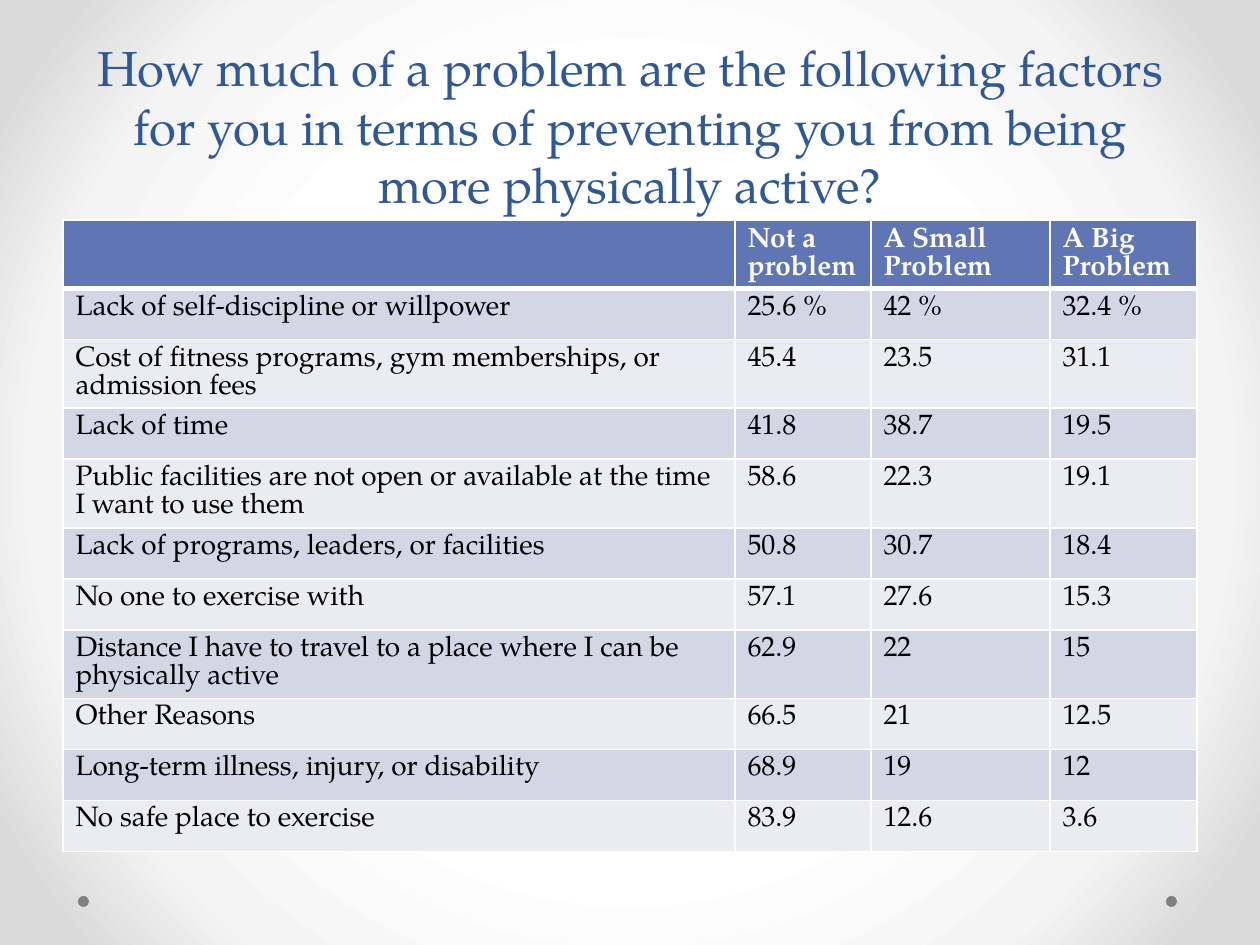
from dataclasses import dataclass

from pptx import Presentation, oxml, util as u
from pptx.dml.color import RGBColor
from pptx.enum import shapes, text
from pptx.oxml import ns

PX = 914400 / 126  # EMU per px


def px(n):
    return u.Emu(round(n * PX))


@dataclass(frozen=True)
class Theme:
    font: str = "TeX Gyre Pagella"
    title_size: int = 28
    table_size: int = 16
    title: str = "2F5897"
    body: str = "000000"
    header: str = "6076B4"
    white: str = "FFFFFF"
    bands: tuple = ("D2D6E5", "EAECF2")
    dot: str = "808080"
    backdrop: tuple = ((50, "FFFFFF"), (76, "F4F4F4"), (92, "DADADA"))


class Deck:
    def __init__(self, prs, theme):
        self.t = theme
        self.s = prs.slides.add_slide(prs.slide_layouts[6])

    def background(self):
        self.s.background.fill.gradient()
        old = self.s._element.find(".//" + ns.qn("a:gradFill"))
        stops = "".join(
            f'<a:gs pos="{pos * 1000}"><a:srgbClr val="{color}"/></a:gs>'
            for pos, color in self.t.backdrop)
        new = oxml.parse_xml(
            f'<a:gradFill {ns.nsdecls("a")} rotWithShape="1"><a:gsLst>{stops}</a:gsLst>'
            '<a:path path="circle"><a:fillToRect l="50000" t="50000" r="50000" b="50000"/>'
            '</a:path></a:gradFill>')
        old.getparent().replace(old, new)

    def style(self, p, size, color, bold=False):
        for r in p.runs:
            r.font.name = self.t.font
            r.font.size = u.Pt(size)
            r.font.bold = bold
            r.font.color.rgb = RGBColor.from_string(color)

    def dot(self, x, y, size):
        sp = self.s.shapes.add_shape(shapes.MSO_SHAPE.OVAL, px(x), px(y), px(size), px(size))
        sp.shadow.inherit = False
        sp.fill.solid()
        sp.fill.fore_color.rgb = RGBColor.from_string(self.t.dot)
        sp.line.fill.background()

    def title(self, words, x, y, w, h):
        tf = self.s.shapes.add_textbox(px(x), px(y), px(w), px(h)).text_frame
        tf.word_wrap = True
        tf.vertical_anchor = text.MSO_ANCHOR.BOTTOM
        tf.text = words
        p = tf.paragraphs[0]
        p.alignment = text.PP_ALIGN.CENTER
        self.style(p, self.t.title_size, self.t.title)

    def borders(self, cell, top, bottom):
        tcPr = cell._tc.get_or_add_tcPr()
        widths = {"lnL": 1, "lnR": 1, "lnT": top, "lnB": bottom}
        for i, (side, width) in enumerate(widths.items()):
            tcPr.insert(i, oxml.parse_xml(
                f'<a:{side} {ns.nsdecls("a")} w="{u.Pt(width)}"><a:solidFill>'
                f'<a:srgbClr val="{self.t.white}"/></a:solidFill></a:{side}>'))

    def cell(self, cell, words, row):
        head = row == 0
        fill = self.t.header if head else self.t.bands[(row - 1) % 2]
        cell.fill.solid()
        cell.fill.fore_color.rgb = RGBColor.from_string(fill)
        self.borders(cell, top=3 if row == 1 else 1, bottom=3 if head else 1)
        cell.text = words
        p = cell.text_frame.paragraphs[0]
        p.line_spacing = u.Pt(self.t.table_size)
        self.style(p, self.t.table_size, self.t.white if head else self.t.body, head)

    def table(self, rows, x, y, widths, row_h):
        tbl = self.s.shapes.add_table(
            len(rows), len(widths), px(x), px(y),
            px(sum(widths)), px(row_h * len(rows))).table
        for col, w in zip(tbl.columns, widths):
            col.width = px(w)
        for i, row in enumerate(rows):
            tbl.rows[i].height = px(row_h)
            for j, words in enumerate(row):
                self.cell(tbl.cell(i, j), words, i)


FACTORS = [
    ("", "Not a problem", "A Small Problem", "A Big Problem"),
    ("Lack of self-discipline or willpower", "25.6 %", "42 %", "32.4 %"),
    ("Cost of fitness programs, gym memberships, or admission fees", "45.4", "23.5", "31.1"),
    ("Lack of time", "41.8", "38.7", "19.5"),
    ("Public facilities are not open or available at the time I want to use them",
     "58.6", "22.3", "19.1"),
    ("Lack of programs, leaders, or facilities", "50.8", "30.7", "18.4"),
    ("No one to exercise with", "57.1", "27.6", "15.3"),
    ("Distance I have to travel to a place where I can be physically active",
     "62.9", "22", "15"),
    ("Other Reasons", "66.5", "21", "12.5"),
    ("Long-term illness, injury, or disability", "68.9", "19", "12"),
    ("No safe place to exercise", "83.9", "12.6", "3.6"),
]


def main():
    prs = Presentation()
    prs.slide_width, prs.slide_height = px(1260), px(945)
    deck = Deck(prs, Theme())

    # Backdrop and corner dots
    deck.background()
    for x in (1166, 78):
        deck.dot(x, 896, 11)

    # Question
    deck.title("How much of a problem are the following factors for you in terms of "
               "preventing you from being more physically active?", 63, 0, 1134, 220)

    # Answers by factor
    deck.table(FACTORS, 63, 220, (672, 136, 179, 147), 51)

    prs.save("out.pptx")


if __name__ == "__main__":
    main()
